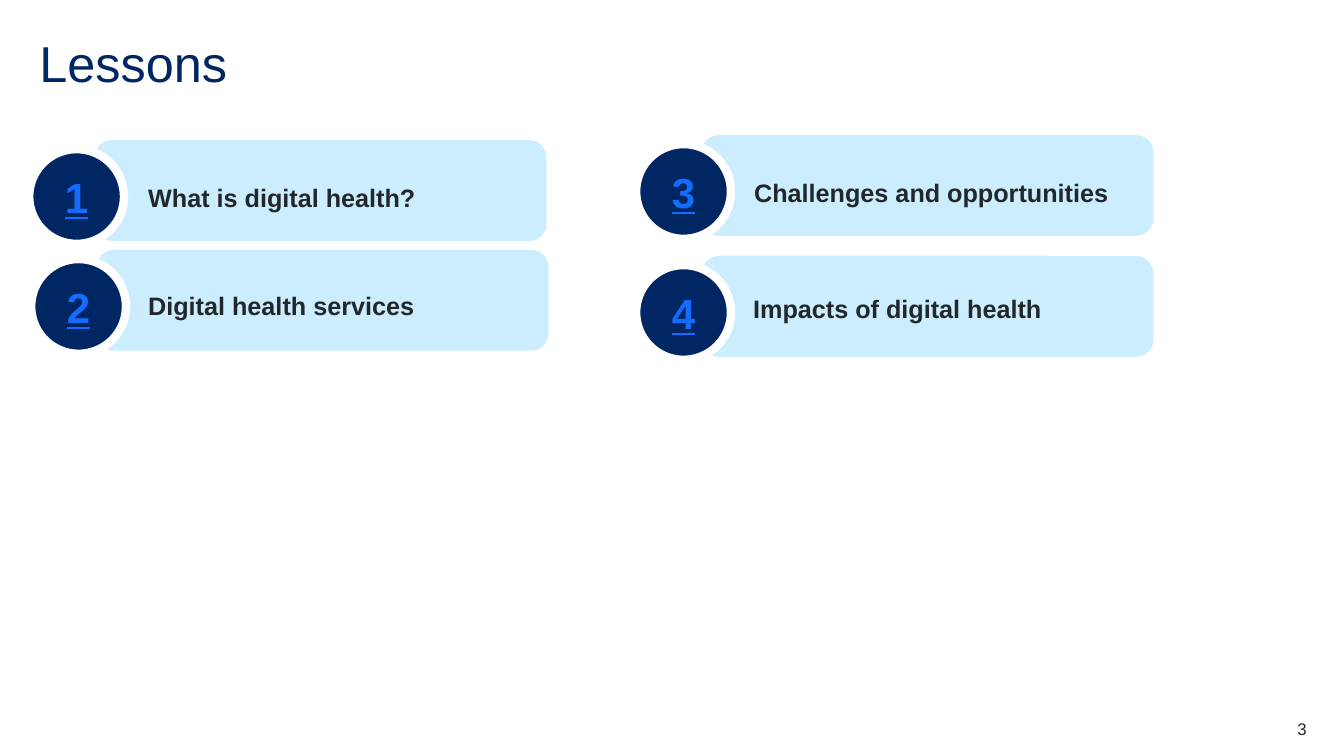
from dataclasses import dataclass

from pptx import Presentation
from pptx.dml.color import RGBColor
from pptx.enum.shapes import MSO_SHAPE as Shape
from pptx.enum.text import MSO_ANCHOR as Anchor, MSO_AUTO_SIZE as AutoSize, PP_ALIGN as Align
from pptx.util import Pt

PX = 9144  # EMU per px, 100 px to the inch

NAVY = RGBColor(0x00, 0x26, 0x64)
SKY = RGBColor(0xCB, 0xED, 0xFD)
BLUE = RGBColor(0x14, 0x6C, 0xFD)
INK = RGBColor(0x22, 0x27, 0x2B)
WHITE = RGBColor(0xFF, 0xFF, 0xFF)

CARD_W, CARD_H = 448, 100
BADGE = 94
BADGE_DX, BADGE_DY = -65, 9
LABEL_W, LABEL_H = 363, 40


@dataclass(frozen=True)
class Lesson:
    number: int
    title: str
    left: int
    top: int
    label_left: int
    label_top: int


LESSONS = [
    Lesson(1, "What is digital health?", 94, 139, 147, 166),
    Lesson(2, "Digital health services", 96, 248, 147, 273),
    Lesson(3, "Challenges and opportunities", 696, 134, 748, 161),
    Lesson(4, "Impacts of digital health", 696, 254, 747, 276),
]


def box(left: int, top: int, width: int, height: int) -> tuple[int, ...]:
    return tuple(v * PX for v in (left, top, width, height))


def write(sp, text: str, size: int, color: RGBColor, bold: bool = False,
          align: Align = Align.LEFT, spacing: float = 1.0):
    """Put one formatted paragraph in a shape and return its font."""
    tf = sp.text_frame
    tf.word_wrap = True
    p = tf.paragraphs[0]
    p.text = text
    p.alignment = align
    p.line_spacing = spacing
    font = p.runs[0].font
    font.name, font.size, font.bold = "Arial", Pt(size), bold
    font.color.rgb = color
    return font


def add_text(slide, bounds: tuple[int, ...]):
    """Add a text box without insets."""
    sp = slide.shapes.add_textbox(*bounds)
    tf = sp.text_frame
    tf.margin_left = tf.margin_top = tf.margin_right = tf.margin_bottom = 0
    return sp


def add_filled(slide, kind: Shape, bounds: tuple[int, ...], fill: RGBColor):
    sp = slide.shapes.add_shape(kind, *bounds)
    sp.shadow.inherit = False
    sp.fill.solid()
    sp.fill.fore_color.rgb = fill
    sp.line.fill.background()
    return sp


def add_lesson(slide, lesson: Lesson) -> None:
    # Card
    card = add_filled(slide, Shape.ROUNDED_RECTANGLE,
                      box(lesson.left, lesson.top, CARD_W, CARD_H), SKY)
    card.adjustments[0] = 0.17

    # Numbered badge
    badge = add_filled(slide, Shape.OVAL,
                       box(lesson.left + BADGE_DX, lesson.top + BADGE_DY, BADGE, BADGE), NAVY)
    badge.line.color.rgb = WHITE
    badge.line.width = Pt(6)
    badge.text_frame.vertical_anchor = Anchor.MIDDLE
    font = write(badge, str(lesson.number), 30, BLUE, bold=True, align=Align.CENTER)
    font.underline = True

    # Lesson title
    label = add_text(slide, box(lesson.label_left, lesson.label_top, LABEL_W, LABEL_H))
    label.fill.solid()
    label.fill.fore_color.rgb = SKY
    write(label, lesson.title, 18, INK, bold=True, spacing=1.5)
    label.text_frame.auto_size = AutoSize.SHAPE_TO_FIT_TEXT


def main() -> None:
    prs = Presentation()
    prs.slide_width, prs.slide_height = 1333 * PX, 750 * PX
    slide = prs.slides.add_slide(prs.slide_layouts[6])

    # Slide title
    write(add_text(slide, box(39, 39, 1256, 60)), "Lessons", 36, NAVY, spacing=0.9)

    # Lesson cards
    for lesson in LESSONS:
        add_lesson(slide, lesson)

    # Slide number
    write(add_text(slide, box(1217, 713, 79, 20)), "3", 12, INK, align=Align.RIGHT)

    prs.save("out.pptx")


if __name__ == "__main__":
    main()
